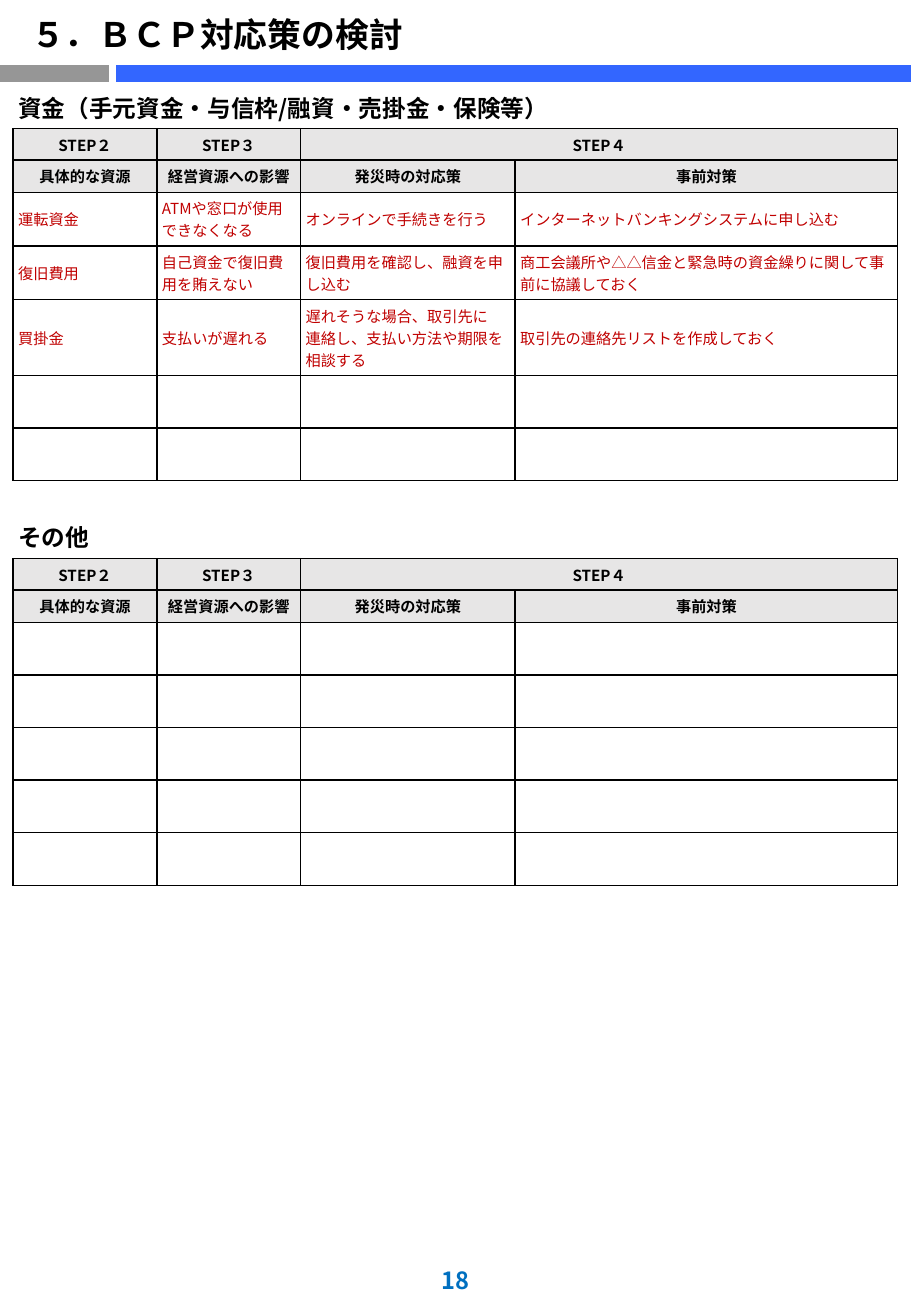
import copy

import lxml.etree
import pptx
import pptx.dml.color
import pptx.enum.shapes
import pptx.enum.text
import pptx.oxml.ns
import pptx.util

PX = 7620  # EMU in one px, 120 px to the inch
FONT = "Noto Sans CJK JP"
COLORS = {"text": "000000", "example": "C00000", "head": "E7E6E6",
          "gray": "969696", "blue": "3366FF", "page": "0070C0"}
ALIGN = pptx.enum.text.PP_ALIGN
ANCHOR = pptx.enum.text.MSO_ANCHOR
qn = pptx.oxml.ns.qn

COLUMNS = [142, 142, 212, 378]
TITLE, HEAD, BLANK = "title", "head", "blank"
STEPS = ["STEP２", "STEP３", "STEP４", ""]
LABELS = ["具体的な資源", "経営資源への影響", "発災時の対応策", "事前対策"]
HEADS = [(HEAD, 31, STEPS), (HEAD, 32, LABELS)]
BLANK_ROW = (BLANK, 52, [""] * 4)
ROWS = [
    (TITLE, 43, ["資金（手元資金・与信枠/融資・売掛金・保険等）"]),
    *HEADS,
    ("example", 53, ["運転資金", "ATMや窓口が使用できなくなる", "オンラインで手続きを行う",
                     "インターネットバンキングシステムに申し込む"]),
    ("example", 53, ["復旧費用", "自己資金で復旧費用を賄えない",
                     "復旧費用を確認し、融資を申し込む",
                     "商工会議所や△△信金と緊急時の資金繰りに関して事前に協議しておく"]),
    ("example", 75, ["買掛金", "支払いが遅れる",
                     "遅れそうな場合、取引先に\n連絡し、支払い方法や期限を相談する",
                     "取引先の連絡先リストを作成しておく"]),
    *[BLANK_ROW] * 2,
    (TITLE, 77, ["その他"]),
    *HEADS,
    *[BLANK_ROW] * 5,
]
FORMATS = {
    TITLE: {"size": 14, "bold": True},
    HEAD: {"size": 9, "bold": True, "align": ALIGN.CENTER},
    "example": {"size": 9, "color": "example"},
    BLANK: {"size": 9},
}


def rgb(name):
    return pptx.dml.color.RGBColor.from_string(COLORS[name])


def put_text(tf, text, size, color="text", bold=False, align=ALIGN.LEFT):
    p = tf.paragraphs[0]
    p.alignment = align
    if not text:
        p._p.get_or_add_endParaRPr().set("sz", str(size * 100))
        return
    p.text = text
    for r in p.runs:
        r.font.size = pptx.util.Pt(size)
        r.font.bold = bold
        r.font.name = FONT
        r.font.color.rgb = rgb(color)
        ea = lxml.etree.SubElement(r.font._element, qn("a:ea"))
        ea.set("typeface", FONT)
    for br in p._p.findall(qn("a:br")):
        br.append(copy.deepcopy(p.runs[0].font._element))


def add_text(s, box, text, **fmt):
    tf = s.shapes.add_textbox(*[v * PX for v in box]).text_frame
    tf.word_wrap = True
    tf.vertical_anchor = ANCHOR.BOTTOM
    put_text(tf, text, **fmt)


def add_bar(s, x1, x2, y, color):
    line = s.shapes.add_connector(pptx.enum.shapes.MSO_CONNECTOR.STRAIGHT,
                                  x1 * PX, y * PX, x2 * PX, y * PX)
    line.line.width = pptx.util.Pt(10)
    line.line.color.rgb = rgb(color)
    lxml.etree.SubElement(line._element.spPr, qn("a:effectLst"))


def add_header(s, x, y, w):
    add_bar(s, x, x + 108, y + 73, "gray")
    add_bar(s, x + 115, x + w, y + 73, "blue")
    add_text(s, (x + 19, y + 5, w - 40, 55), "５．ＢＣＰ対応策の検討",
             size=20, bold=True)


def set_borders(cell, drawn):
    """Draw the sides named in drawn (L, R, T, B) and clear the others."""
    tcPr = cell._tc.get_or_add_tcPr()
    for side in "LRTB":
        ln = lxml.etree.SubElement(tcPr, qn("a:ln" + side))
        ln.set("w", str(pptx.util.Pt(1)))
        if side in drawn:
            fill = lxml.etree.SubElement(ln, qn("a:solidFill"))
            clr = lxml.etree.SubElement(fill, qn("a:srgbClr"))
            clr.set("val", COLORS["text"])
        else:
            lxml.etree.SubElement(ln, qn("a:noFill"))


def format_cell(cell, kind, drawn):
    cell.margin_left = cell.margin_right = 5 * PX
    cell.margin_top = cell.margin_bottom = 5 * PX
    cell.vertical_anchor = ANCHOR.BOTTOM if kind == TITLE else ANCHOR.MIDDLE
    set_borders(cell, drawn)
    if kind == HEAD:
        cell.fill.solid()
        cell.fill.fore_color.rgb = rgb("head")
    else:
        cell.fill.background()


def add_plan_table(s, x, y):
    height = sum(h for _, h, _ in ROWS)
    table = s.shapes.add_table(len(ROWS), len(COLUMNS), x * PX, y * PX,
                               sum(COLUMNS) * PX, height * PX).table
    table.first_row = table.horz_banding = False
    for column, w in zip(table.columns, COLUMNS):
        column.width = w * PX
    for i, (kind, h, texts) in enumerate(ROWS):
        table.rows[i].height = h * PX
        if kind == TITLE:
            drawn = "TB" if i else "B"
            table.cell(i, 0).merge(table.cell(i, 3))
        else:
            drawn = "LRTB"
        if texts is STEPS:
            table.cell(i, 2).merge(table.cell(i, 3))
        for j in range(len(COLUMNS)):
            format_cell(table.cell(i, j), kind, drawn)
        for j, text in enumerate(texts):
            put_text(table.cell(i, j).text_frame, text, **FORMATS[kind])


def main():
    prs = pptx.Presentation()
    prs.slide_width, prs.slide_height = 900 * PX, 1300 * PX
    s = prs.slides.add_slide(prs.slide_layouts[6])
    add_header(s, 0, 0, 900)
    add_plan_table(s, 13, 84)
    add_text(s, (0, 1236, 900, 48), "18", size=14, color="page", bold=True,
             align=ALIGN.CENTER)
    prs.save("out.pptx")


if __name__ == "__main__":
    main()
